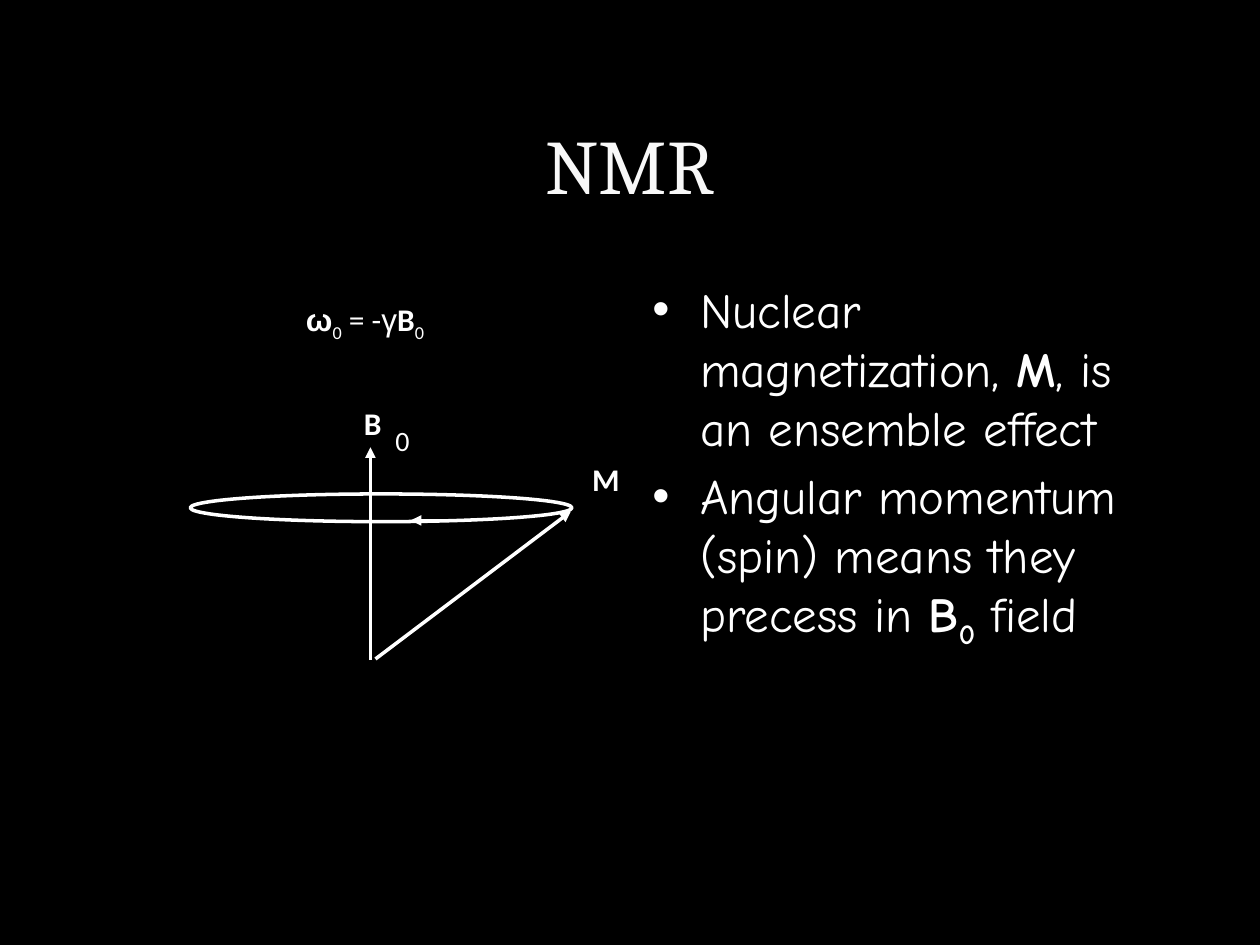
from lxml import etree
from pptx import Presentation
from pptx.dml.color import RGBColor
from pptx.enum.shapes import MSO_CONNECTOR, MSO_SHAPE
from pptx.enum.text import MSO_ANCHOR, PP_ALIGN
from pptx.oxml.ns import qn
from pptx.util import Inches, Pt

STRAIGHT = MSO_CONNECTOR.STRAIGHT
OVAL = MSO_SHAPE.OVAL
TOP, MIDDLE = MSO_ANCHOR.TOP, MSO_ANCHOR.MIDDLE
LEFT, CENTER = PP_ALIGN.LEFT, PP_ALIGN.CENTER

COLORS = {"background": "000000", "title": "F8F8F8", "ink": "FFFFFF"}
BOLD = {"bold": True}
SUB = {"sub": True}


def rgb(name):
    return RGBColor.from_string(COLORS[name])


def add_run(p, text, font="Calibri", size=18, color="ink", bold=False, sub=False):
    r = p.add_run()
    r.text = text
    r.font.name = font
    r.font.size = Pt(size)
    r.font.bold = bold
    r.font.color.rgb = rgb(color)
    if sub:
        r.font._element.set("baseline", "-25000")


def add_bullet(p, indent=0.38):
    pPr = p._p.get_or_add_pPr()
    pPr.set("marL", str(Inches(indent)))
    pPr.set("indent", str(-Inches(indent)))
    etree.SubElement(pPr, qn("a:buFont")).set("typeface", "Arial")
    etree.SubElement(pPr, qn("a:buChar")).set("char", "•")


class SlideBuilder:
    """Holds the current slide and its line style."""

    def __init__(self, s, line_width=2):
        self.s = s
        self.line_width = Pt(line_width)
        s.background.fill.solid()
        s.background.fill.fore_color.rgb = rgb("background")

    def text(self, box, paragraphs, align=LEFT, anchor=TOP, before=0,
             bullets=False, wrap=True, **style):
        """Each paragraph is a list of (text, format overrides) pairs."""
        tf = self.s.shapes.add_textbox(*map(Inches, box)).text_frame
        tf.word_wrap = wrap
        tf.vertical_anchor = anchor
        for i, runs in enumerate(paragraphs):
            p = tf.add_paragraph() if i else tf.paragraphs[0]
            p.alignment = align
            p.space_before = Pt(before)
            if bullets:
                add_bullet(p)
            for text, changes in runs:
                add_run(p, text, **{**style, **changes})

    def stroke(self, shape):
        shape.line.color.rgb = rgb("ink")
        shape.line.width = self.line_width

    def arrow(self, start, end):
        c = self.s.shapes.add_connector(STRAIGHT, *map(Inches, start + end))
        self.stroke(c)
        etree.SubElement(c.line._get_or_add_ln(), qn("a:tailEnd")).set("type", "triangle")
        etree.SubElement(c._element.spPr, qn("a:effectLst"))

    def ellipse(self, box):
        sp = self.s.shapes.add_shape(OVAL, *map(Inches, box))
        sp.shadow.inherit = False
        sp.fill.background()
        self.stroke(sp)


def main():
    prs = Presentation()
    prs.slide_width, prs.slide_height = Inches(10), Inches(7.5)
    b = SlideBuilder(prs.slides.add_slide(prs.slide_layouts[6]))

    b.text((0.75, 0.67, 8.5, 1.25), [[("NMR", {})]], align=CENTER,
           anchor=MIDDLE, font="Cambria", size=44, color="title")
    b.text((5.08, 2.17, 4.17, 4.5), [
        [("Nuclear magnetization, ", {}), ("M", BOLD), (", is an ensemble effect", {})],
        [("Angular momentum (spin) means they precess in ", {}), ("B", BOLD),
         ("0", {**BOLD, **SUB}), (" field", {})],
    ], bullets=True, before=5.6, font="Comic Neue", size=28)

    b.text((2.33, 2.33, 1.54, 0.51), [[
        ("ω", {"font": "Arial", "bold": True}), ("0", SUB), (" = -", {}),
        ("γ", {"font": "Arial"}), ("B", BOLD), ("0", SUB),
    ]], before=9)

    # Precession: field axis, cone rim, magnetization vector, direction of turn
    b.arrow((2.94, 5.24), (2.94, 3.55))
    b.ellipse((1.51, 3.92, 3.03, 0.22))
    b.arrow((2.98, 5.23), (4.53, 4.06))
    b.arrow((3.51, 4.13), (3.26, 4.13))

    b.text((2.79, 3.16, 0.49, 0.51), [[("B", BOLD)]], before=9)
    b.text((3.04, 3.31, 0.32, 0.38), [[("0", {})]], size=16, wrap=False)
    b.text((4.6, 3.6, 0.61, 0.51), [[("M", BOLD)]], before=9)

    prs.save("out.pptx")


if __name__ == "__main__":
    main()
